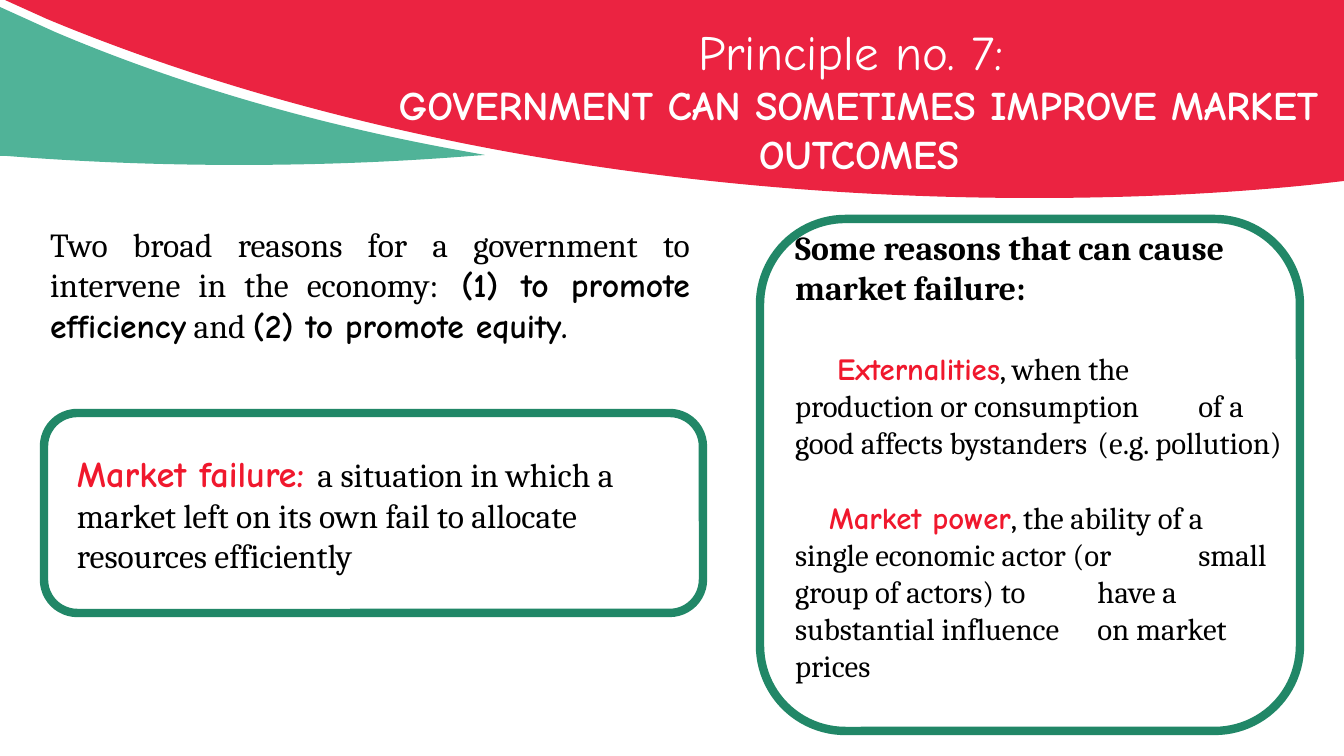
from pptx import Presentation
from pptx import util as u
from pptx.dml.color import RGBColor
from pptx.enum import shapes, text
from pptx.oxml.ns import qn

PX = 9525 / 1.05  # EMU per px, slide is 1344 x 756 px
COLORS = {"red": "EB2341", "teal": "50B398", "border": "218767",
          "key": "F0182D", "white": "FFFFFF", "black": "000000"}
SERIF, COMIC = "Cambria", "Comic Neue"

# ---- Content: a run is (text, font, size, bold, colour) ----
TITLE = [
    {"runs": [("Principle no. 7: ", COMIC, 35, False, "white")]},
    {"runs": [("GOVERNMENT CAN SOMETIMES IMPROVE MARKET OUTCOMES",
               COMIC, 29, True, "white")]},
]
REASONS = [{"runs": [
    ("Two broad reasons for a government to intervene in the economy:",
     SERIF, 24, False, "black"),
    (" (1) to promote efficiency", COMIC, 24, True, "black"),
    (" and ", SERIF, 24, False, "black"),
    ("(2) to promote equity.", COMIC, 24, True, "black"),
]}]
FAILURE = [{"runs": [
    ("Market failure: ", COMIC, 26, True, "key"),
    ("a situation in which a market left on its own fail to allocate "
     "resources efficiently", SERIF, 24, False, "black"),
]}]
CAUSES = [
    {"runs": [("Some reasons that can cause market failure:",
               SERIF, 24, True, "black")]},
    {"before": 30, "indent": 42, "runs": [
        ("Externalities", COMIC, 22, True, "key"),
        (", when the \tproduction or consumption \tof a good affects "
         "bystanders \t(e.g. pollution)", SERIF, 22, False, "black")]},
    {"before": 27.5, "indent": 34, "runs": [
        ("Market power", COMIC, 22, True, "key"),
        (", the ability of a \tsingle economic actor (or \tsmall group of "
         "actors) to \thave a substantial influence \ton market prices",
         SERIF, 22, False, "black")]},
]

# ---- Places in px: left, top, width, height ----
TITLE_AT = (342, 16, 1034, 168)
REASONS_AT = (40, 219, 660, 173)
FAILURE_AT = (67, 446, 640, 136)
CAUSES_AT = (785, 222, 529, 509)
FRAMES = [(44, 413, 659, 200), (760, 219, 540, 512)]

# Outlines in px: two numbers make a line, six a Bezier curve
BANNER = [
    ("red", [(5, 0), (1344, 0), (1344, 181), (1309, 185),
             (1220, 194, 1128, 198, 1034, 198),
             (659, 198, 316, 131, 47, 19)]),
    ("teal", [(0, 7), (55, 32), (175, 83, 313, 124, 463, 151), (485, 155),
              (471, 156), (395, 162, 318, 165, 239, 165),
              (160, 165, 83, 162, 7, 156), (0, 156)]),
]


def emu(values):
    return [round(v * PX) for v in values]


def rgb(name):
    return RGBColor.from_string(COLORS[name])


def add_outline(s, segments):
    """Lay out every point as a line, then join each curve's three points."""
    points = [seg[i:i + 2] for seg in segments for i in range(0, len(seg), 2)]
    builder = s.shapes.build_freeform(*points[0], scale=PX)
    builder.add_line_segments(points[1:], close=True)
    sp = builder.convert_to_shape()
    lines = iter(list(sp._element.iter(qn("a:lnTo"))))
    for seg in segments[1:]:
        line = next(lines)
        if len(seg) == 6:
            line.tag = qn("a:cubicBezTo")
            for extra in (next(lines), next(lines)):
                line.append(extra[0])
                extra.getparent().remove(extra)
    return sp


def write(sp, at, paragraphs, align):
    sp.left, sp.top, sp.width, sp.height = emu(at)
    tf = sp.text_frame
    frame_format = {"word_wrap": True, "auto_size": text.MSO_AUTO_SIZE.NONE,
                    "vertical_anchor": text.MSO_ANCHOR.TOP}
    for name, value in frame_format.items():
        setattr(tf, name, value)
    for i, para in enumerate(paragraphs):
        p = tf.paragraphs[0] if i == 0 else tf.add_paragraph()
        para_format = {"alignment": align, "line_spacing": 1.0,
                       "space_before": u.Pt(para.get("before", 0)),
                       "space_after": u.Pt(0)}
        for name, value in para_format.items():
            setattr(p, name, value)
        pPr = p._p.get_or_add_pPr()
        pPr.set("marL", "0")
        pPr.set("indent", str(round(para.get("indent", 0) * PX)))
        pPr.set("defTabSz", str(u.Inches(1)))
        pPr.append(pPr.makeelement(qn("a:buNone"), {}))
        for words, font, size, bold, color in para["runs"]:
            r = p.add_run()
            r.text = words
            run_format = {"name": font, "size": u.Pt(size), "bold": bold}
            for name, value in run_format.items():
                setattr(r.font, name, value)
            r.font.color.rgb = rgb(color)


prs = Presentation()
prs.slide_width, prs.slide_height = emu((1344, 756))
s = prs.slides.add_slide(prs.slide_layouts[3])

# Banner, behind the text
for i, (color, segments) in enumerate(BANNER):
    sp = add_outline(s, segments)
    sp.shadow.inherit = False
    sp.fill.solid()
    sp.fill.fore_color.rgb = rgb(color)
    sp.line.fill.background()
    s.shapes._spTree.insert(2 + i, sp._element)

# Title and text
title, reasons, causes = s.placeholders
failure = s.shapes.add_textbox(*emu(FAILURE_AT))
write(title, TITLE_AT, TITLE, text.PP_ALIGN.CENTER)
write(reasons, REASONS_AT, REASONS, text.PP_ALIGN.JUSTIFY)
write(failure, FAILURE_AT, FAILURE, text.PP_ALIGN.LEFT)
write(causes, CAUSES_AT, CAUSES, text.PP_ALIGN.LEFT)

# Rounded frames
for at in FRAMES:
    sp = s.shapes.add_shape(shapes.MSO_SHAPE.ROUNDED_RECTANGLE, *emu(at))
    sp.shadow.inherit = False
    sp.fill.background()
    sp.line.color.rgb = rgb("border")
    sp.line.width = u.Pt(6)

prs.save("out.pptx")
